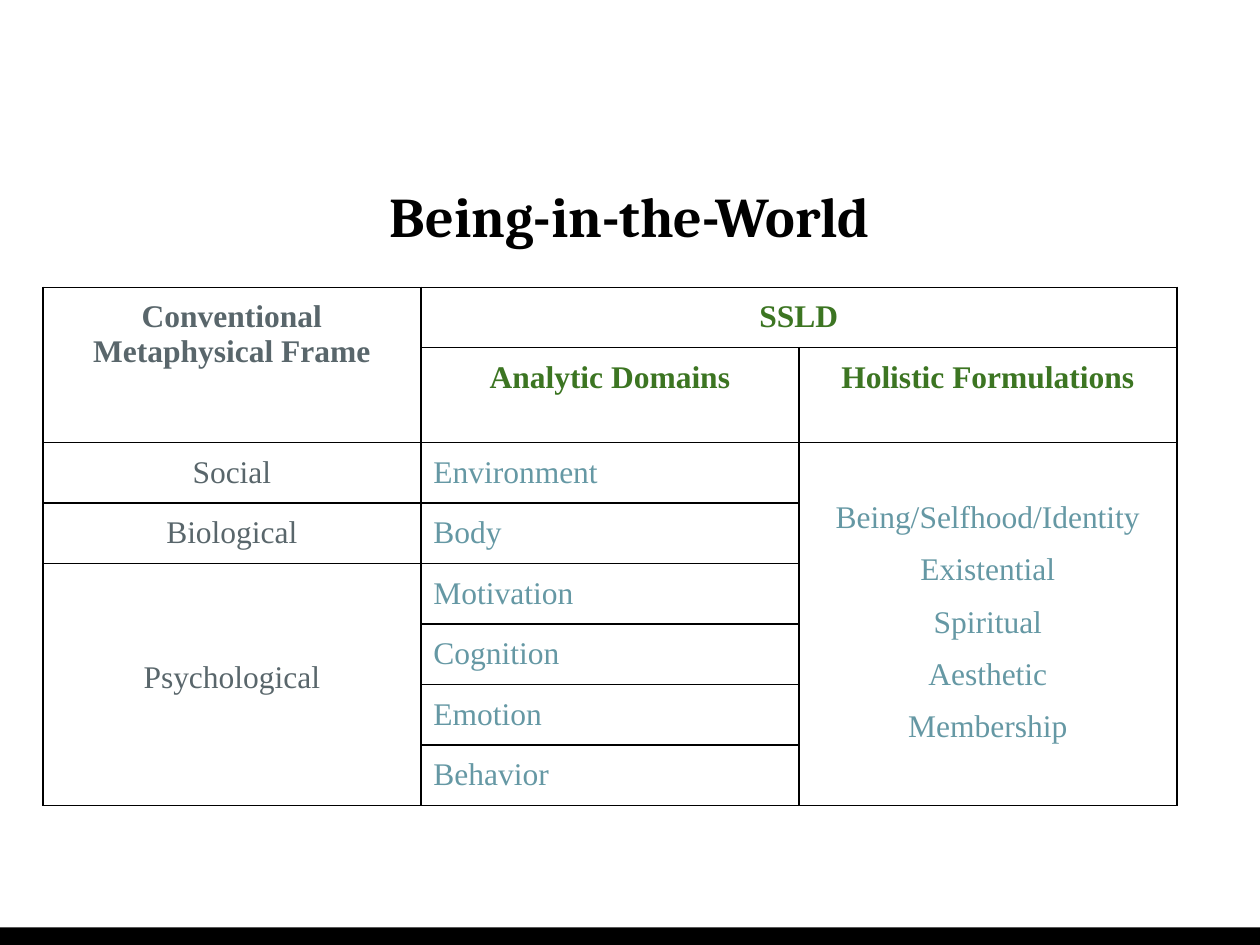
from dataclasses import dataclass
from lxml.etree import SubElement as Sub
from pptx import Presentation
from pptx.dml.color import RGBColor as Rgb
from pptx.enum.shapes import MSO_SHAPE as Kind
from pptx.enum.text import MSO_ANCHOR as Anchor, PP_ALIGN as Align
from pptx.oxml.ns import qn
from pptx.util import Inches, Pt


@dataclass
class Theme:
    black: str = "000000"
    gray: str = "59666B"
    green: str = "3C7522"
    blue: str = "6598A4"
    serif: str = "Cambria"
    roman: str = "Times New Roman"
    head: int = 32
    body: int = 18
    rule: int = 1


theme = Theme()


def write(frame, lines, font, size, color, bold=False, align=Align.CENTER, gap=None):
    frame.word_wrap = True
    for i, line in enumerate(lines):
        para = frame.paragraphs[0] if i == 0 else frame.add_paragraph()
        para.alignment = align
        para.line_spacing = gap
        run = para.add_run()
        run.text = line
        run.font.name = font
        run.font.size = Pt(size)
        run.font.bold = bold
        run.font.color.rgb = Rgb.from_string(color)


def border(cell):
    props = cell._tc.get_or_add_tcPr()
    for side in ("lnL", "lnR", "lnT", "lnB"):
        line = Sub(props, qn(f"a:{side}"), w=str(Pt(theme.rule)))
        Sub(Sub(line, qn("a:solidFill")), qn("a:srgbClr"), val=theme.black)


deck = Presentation()
deck.slide_width, deck.slide_height = Inches(10), Inches(7.5)
slide = deck.slides.add_slide(deck.slide_layouts[5])

bar = slide.shapes.add_shape(Kind.RECTANGLE, 0, Inches(7.36), Inches(10), Inches(0.14))
bar.shadow.inherit = False
bar.fill.solid()
bar.fill.fore_color.rgb = Rgb.from_string(theme.black)
bar.line.fill.background()

title = slide.shapes.title
title.left, title.top = Inches(0.34), Inches(1.37)
title.width, title.height = Inches(9.32), Inches(0.68)
frame = title.text_frame
frame.vertical_anchor = Anchor.MIDDLE
frame.margin_left = frame.margin_right = Inches(0.1)
frame.margin_top = frame.margin_bottom = Inches(0.1)
write(frame, ["Being-in-the-World"], theme.serif, theme.head, theme.black, True)

grid = slide.shapes.add_table(
    8, 3, Inches(0.34), Inches(2.28), Inches(9), Inches(4.12)
).table
grid.first_row = grid.horz_banding = False
for col in grid.columns:
    col.width = Inches(3)
for i, row in enumerate(grid.rows):
    row.height = Inches(0.75 if i == 1 else 0.48)
for cell in grid.iter_cells():
    border(cell)
    cell.fill.background()
    cell.margin_left = cell.margin_right = Inches(0.1)
    cell.margin_top = cell.margin_bottom = Inches(0.1)

for start, end in (
    ((0, 0), (1, 0)),
    ((0, 1), (0, 2)),
    ((2, 2), (7, 2)),
    ((4, 0), (7, 0)),
):
    grid.cell(*start).merge(grid.cell(*end))

heads = (
    (0, 0, ["Conventional", "Metaphysical Frame"], theme.gray),
    (0, 1, ["SSLD"], theme.green),
    (1, 1, ["Analytic Domains"], theme.green),
    (1, 2, ["Holistic Formulations"], theme.green),
)
for row, col, lines, color in heads:
    write(grid.cell(row, col).text_frame, lines, theme.roman, theme.body, color, True)

for row, name in enumerate(("Social", "Biological", "Psychological"), 2):
    write(grid.cell(row, 0).text_frame, [name], theme.roman, theme.body, theme.gray)
grid.cell(4, 0).margin_top = Inches(0.77)

parts = ("Environment", "Body", "Motivation", "Cognition", "Emotion", "Behavior")
for row, name in enumerate(parts, 2):
    write(grid.cell(row, 1).text_frame, [name], theme.roman, theme.body,
          theme.blue, align=Align.LEFT)

whole = grid.cell(2, 2)
whole.margin_top = Inches(0.32)
forms = ["Being/Selfhood/Identity", "Existential", "Spiritual", "Aesthetic", "Membership"]
write(whole.text_frame, forms, theme.roman, theme.body, theme.blue, gap=1.5)

deck.save("out.pptx")
